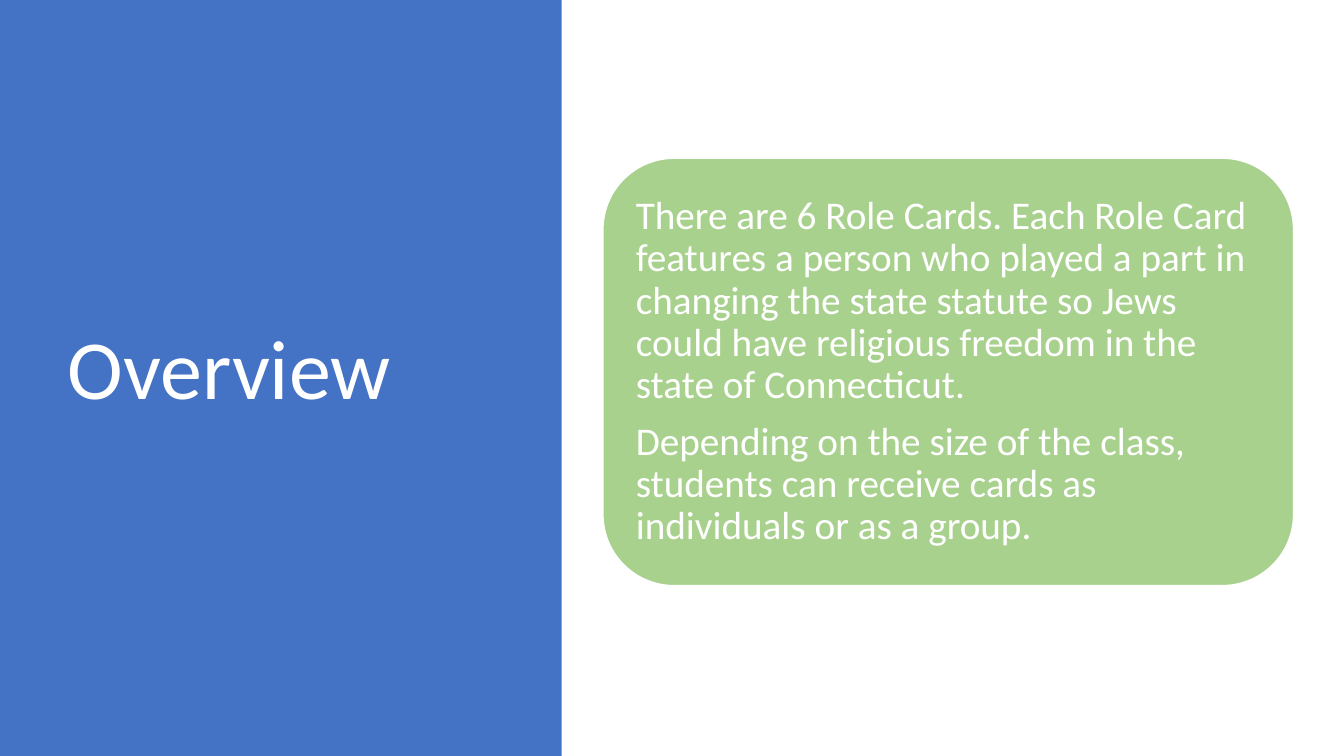
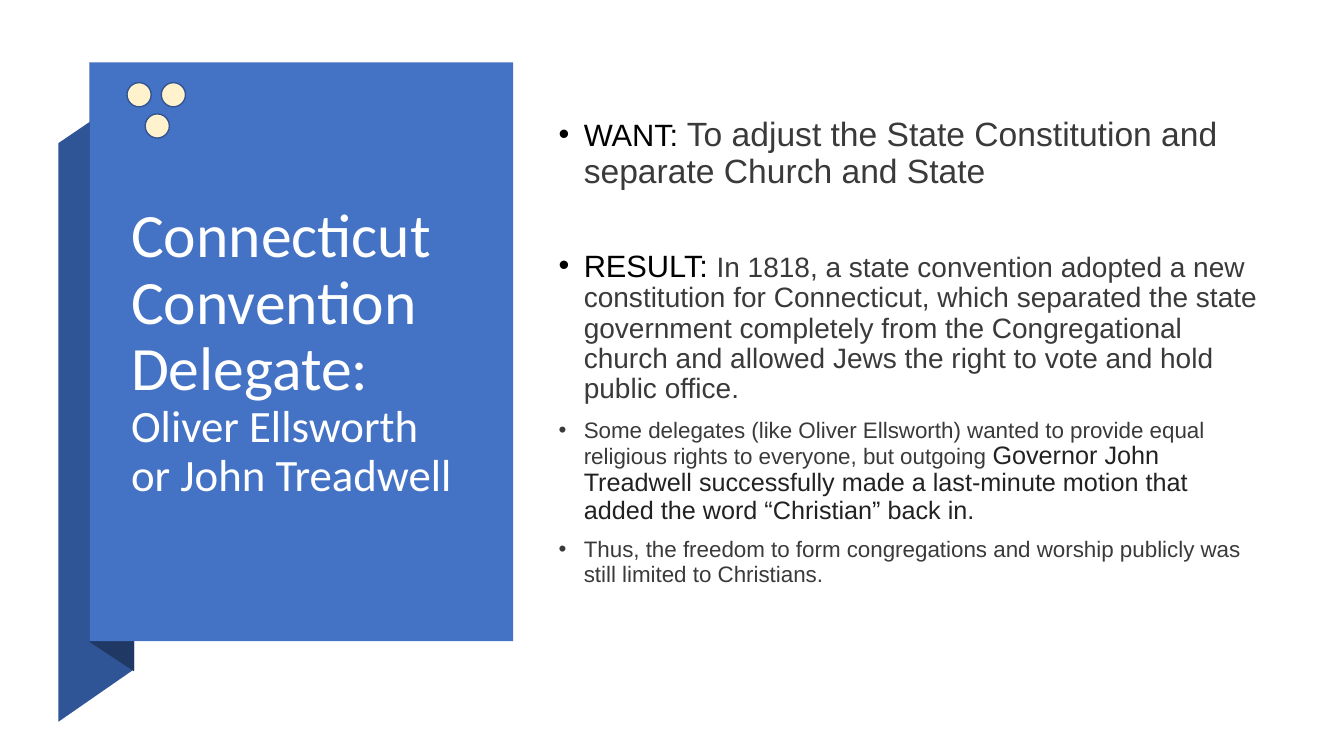
from typing import NamedTuple

from pptx import Presentation
from pptx.dml.color import RGBColor
from pptx.enum.shapes import MSO_SHAPE as Shape
from pptx.enum.text import MSO_ANCHOR as Anchor, MSO_AUTO_SIZE as AutoSize, PP_ALIGN as Align
from pptx.util import Pt

EMU_PER_PX = 9144  # 100 px to the inch

WHITE = RGBColor(0xFF, 0xFF, 0xFF)
BLACK = RGBColor(0x00, 0x00, 0x00)
BLUE = RGBColor(0x44, 0x72, 0xC4)
BLUE_SIDE = RGBColor(0x2F, 0x55, 0x97)
BLUE_FOLD = RGBColor(0x20, 0x38, 0x64)
BLUE_OUTLINE = RGBColor(0x32, 0x54, 0x91)
GREEN = RGBColor(0xA9, 0xD1, 0x8E)
CREAM = RGBColor(0xFF, 0xF2, 0xCC)
GREY = RGBColor(0x3A, 0x3A, 0x3A)
DARK_GREY = RGBColor(0x22, 0x22, 0x22)

TITLE_FONT = "Calibri"
BODY_FONT = "Arial"
LINE_SPACING = 0.9
TITLE_ONLY, TITLE_AND_CONTENT = 5, 1


class Box(NamedTuple):
    left: int
    top: int
    width: int
    height: int


class Span(NamedTuple):
    text: str
    size: int
    color: RGBColor


class Bullet(NamedTuple):
    spans: list[Span]
    space_before: int = 10


ROLE_CARD_NOTES = [
    "There are 6 Role Cards. Each Role Card features a person who played a part in changing "
    "the state statute so Jews could have religious freedom in the state of Connecticut.",
    "Depending on the size of the class, students can receive cards as individuals or as a group.",
]

DELEGATE_BULLETS = [
    Bullet([
        Span("WANT: ", 22, BLACK),
        Span("To adjust the State Constitution and separate Church and State", 24, GREY),
    ], space_before=0),
    Bullet([
        Span("RESULT: ", 22, BLACK),
        Span("In 1818, a state convention adopted a new constitution for Connecticut, which "
             "separated the state government completely from the Congregational church and "
             "allowed Jews the right to vote and hold public office.", 20, GREY),
    ], space_before=43),
    Bullet([
        Span("Some delegates (like Oliver Ellsworth) wanted to provide equal religious rights "
             "to everyone, but outgoing ", 16, GREY),
        Span("Governor John Treadwell successfully made a last-minute motion that added the "
             "word “Christian” back in.", 18, DARK_GREY),
    ]),
    Bullet([
        Span("Thus, the freedom to form congregations and worship publicly was still limited "
             "to Christians.", 16, GREY),
    ]),
]


def px(length: int) -> int:
    return length * EMU_PER_PX


def paint(shape, fill: RGBColor, line: RGBColor | None = None) -> None:
    shape.shadow.inherit = False
    shape.fill.solid()
    shape.fill.fore_color.rgb = fill
    if line is None:
        shape.line.fill.background()
    else:
        shape.line.color.rgb = line
        shape.line.width = Pt(1)


def add_preset(slide, kind: Shape, box: Box, fill: RGBColor, line: RGBColor | None = None):
    shape = slide.shapes.add_shape(kind, *map(px, box))
    paint(shape, fill, line)
    return shape


def add_outline(slide, points: list[tuple[int, int]], fill: RGBColor) -> None:
    builder = slide.shapes.build_freeform(*points[0], scale=EMU_PER_PX)
    builder.add_line_segments(points[1:], close=True)
    paint(builder.convert_to_shape(), fill)


def place_placeholder(placeholder, box: Box):
    """Move a placeholder in front of the shapes drawn so far and return its text frame."""
    placeholder.element.getparent().append(placeholder.element)
    placeholder.left, placeholder.top, placeholder.width, placeholder.height = map(px, box)
    frame = placeholder.text_frame
    frame.word_wrap = True
    frame.auto_size = AutoSize.NONE
    frame.vertical_anchor = Anchor.MIDDLE
    return frame


def add_runs(paragraph, spans: list[Span]) -> None:
    for span in spans:
        run = paragraph.add_run()
        run.text = span.text
        run.font.size = Pt(span.size)
        run.font.color.rgb = span.color


def write_title(slide, box: Box, lines: list[Span]) -> None:
    paragraph = place_placeholder(slide.shapes.title, box).paragraphs[0]
    paragraph.alignment = Align.LEFT
    paragraph.line_spacing = LINE_SPACING
    paragraph.font.name = TITLE_FONT
    for index, line in enumerate(lines):
        if index:
            paragraph.add_line_break()
        add_runs(paragraph, [line])


def write_bullets(slide, box: Box, bullets: list[Bullet]) -> None:
    frame = place_placeholder(slide.placeholders[1], box)
    for index, bullet in enumerate(bullets):
        paragraph = frame.add_paragraph() if index else frame.paragraphs[0]
        properties = paragraph._p.get_or_add_pPr()
        properties.set("marL", str(px(25)))
        properties.set("indent", str(px(-25)))
        paragraph.alignment = Align.LEFT
        paragraph.line_spacing = LINE_SPACING
        paragraph.space_before = Pt(bullet.space_before)
        paragraph.font.name = BODY_FONT
        add_runs(paragraph, bullet.spans)


def add_note_card(slide, box: Box, notes: list[str]) -> None:
    frame = add_preset(slide, Shape.ROUNDED_RECTANGLE, box, GREEN, WHITE).text_frame
    frame.word_wrap = True
    frame.vertical_anchor = Anchor.MIDDLE
    frame.margin_left = frame.margin_right = frame.margin_top = frame.margin_bottom = px(12)
    for index, note in enumerate(notes):
        paragraph = frame.add_paragraph() if index else frame.paragraphs[0]
        paragraph.text = note
        paragraph.alignment = Align.LEFT
        paragraph.line_spacing = LINE_SPACING
        paragraph.space_before = Pt(10 if index else 0)
        paragraph.font.name = TITLE_FONT
        paragraph.font.size = Pt(28)
        paragraph.font.color.rgb = WHITE


def add_folded_panel(slide, panel: Box) -> None:
    """Draw a panel with a ribbon folded behind its left edge."""
    side, fold = panel.left - 31, panel.left + 44
    bottom = panel.top + panel.height
    add_outline(slide, [(side, 716), (fold, 664), (fold, 91), (side, 142)], BLUE_SIDE)
    add_outline(slide, [(panel.left, bottom + 1), (fold, bottom + 30), (fold, 90),
                        (panel.left, panel.top)], BLUE_FOLD)
    add_preset(slide, Shape.RECTANGLE, panel, BLUE)


def add_overview_slide(presentation) -> None:
    slide = presentation.slides.add_slide(presentation.slide_layouts[TITLE_ONLY])
    add_preset(slide, Shape.RECTANGLE, Box(0, 0, 557, 750), BLUE)
    write_title(slide, Box(57, 68, 416, 602), [Span("Overview", 60, WHITE)])
    add_note_card(slide, Box(598, 157, 685, 424), ROLE_CARD_NOTES)


def add_delegate_slide(presentation) -> None:
    slide = presentation.slides.add_slide(presentation.slide_layouts[TITLE_AND_CONTENT])
    add_folded_panel(slide, Box(89, 62, 420, 574))
    write_title(slide, Box(120, 97, 353, 506), [
        Span("Connecticut Convention Delegate:", 44, WHITE),
        Span("Oliver Ellsworth or John Treadwell", 32, WHITE),
    ])
    write_bullets(slide, Box(544, 97, 714, 505), DELEGATE_BULLETS)
    for left, top in [(126, 82), (160, 82), (144, 113)]:
        add_preset(slide, Shape.OVAL, Box(left, top, 24, 24), CREAM, BLUE_OUTLINE)


def main() -> None:
    presentation = Presentation()
    presentation.slide_width = px(1333)
    presentation.slide_height = px(750)
    add_overview_slide(presentation)
    add_delegate_slide(presentation)
    presentation.save("out.pptx")


if __name__ == "__main__":
    main()
